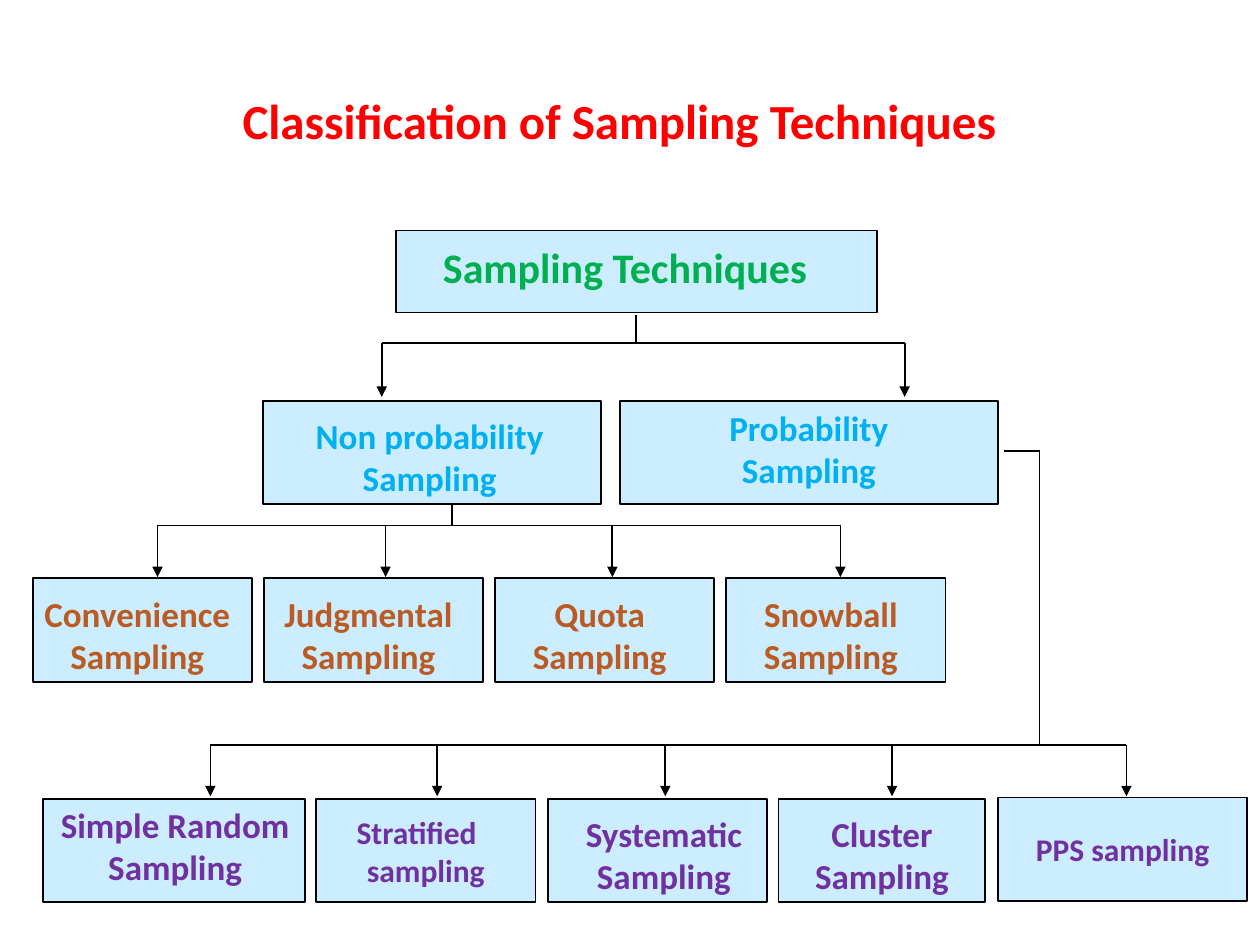
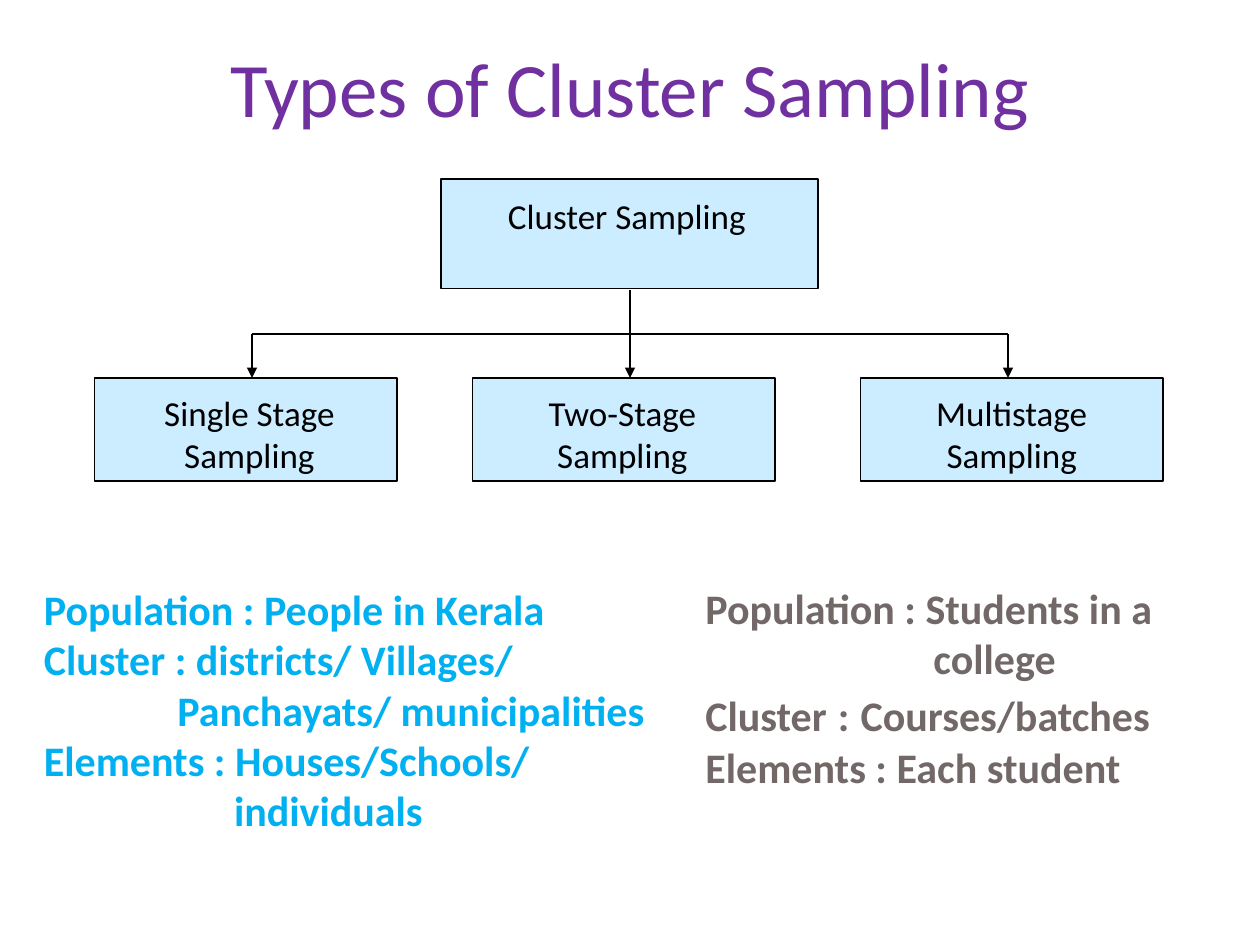
"""Two slides: a tree of sampling techniques and the types of cluster sampling."""
from lxml.etree import SubElement
from pptx import Presentation
from pptx.dml.color import RGBColor
from pptx.enum.shapes import MSO_CONNECTOR, MSO_SHAPE
from pptx.enum.text import MSO_ANCHOR, PP_ALIGN
from pptx.oxml.ns import qn
from pptx.util import Inches, Pt

FONT = "Calibri"
BLACK, RED, GREEN, BLUE = "000000", "FF0000", "00B050", "00B0F0"
BROWN, PURPLE, GREY, PALE_BLUE = "B95B22", "7030A0", "726868", "CCECFF"
BOX_HEIGHT = 0.82
TEXT_TOP = 0.11


def add_text(slide, at, lines, size, colour, bold=True, boxed=True,
             top=TEXT_TOP, shift=0, middle=False, align=PP_ALIGN.CENTER):
    """Write lines, with runs parted by a bar, in a box or on the slide."""
    area = [Inches(length) for length in at]
    if boxed:
        holder = slide.shapes.add_shape(MSO_SHAPE.RECTANGLE, *area)
        holder.shadow.inherit = False
        holder.fill.solid()
        holder.fill.fore_color.rgb = RGBColor.from_string(PALE_BLUE)
        holder.line.color.rgb = RGBColor.from_string(BLACK)
        holder.line.width = Pt(1)
    else:
        holder = slide.shapes.add_textbox(*area)
    frame = holder.text_frame
    frame.word_wrap = True
    frame.vertical_anchor = MSO_ANCHOR.MIDDLE if middle else MSO_ANCHOR.TOP
    if boxed:
        frame.margin_left = Inches(max(0, 2 * shift))
        frame.margin_right = Inches(max(0, -2 * shift))
        frame.margin_top = frame.margin_bottom = Inches(0 if middle else top)
    for number, line in enumerate(lines):
        paragraph = frame.paragraphs[0] if number == 0 else frame.add_paragraph()
        paragraph.alignment = align
        for part in line.split("|"):
            run = paragraph.add_run()
            run.text = part
            run.font.name = FONT
            run.font.size = Pt(size)
            run.font.bold = bold
            run.font.color.rgb = RGBColor.from_string(colour)
    return frame.paragraphs


def add_line(slide, start, end, arrow=False):
    """Draw a thin black line, with an arrowhead at its end if asked."""
    ends = [Inches(length) for length in (*start, *end)]
    line = slide.shapes.add_connector(MSO_CONNECTOR.STRAIGHT, *ends)
    line.line.color.rgb = RGBColor.from_string(BLACK)
    line.line.width = Pt(1)
    if arrow:
        SubElement(line.line._get_or_add_ln(), qn("a:tailEnd"), type="triangle")
    SubElement(line._element.spPr, qn("a:effectLst"))


deck = Presentation()
deck.slide_width, deck.slide_height = Inches(10), Inches(7.5)
techniques, clusters = [deck.slides.add_slide(deck.slide_layouts[6]) for _ in range(2)]

add_text(techniques, (1.33, 0.67, 7.17, 0.57), ["Classification of Sampling Techniques"],
         28, RED, boxed=False)
add_text(techniques, (3.14, 1.83, 3.82, 0.65), ["Sampling Techniques"],
         24, GREEN, top=0.09, shift=-0.09)
add_text(techniques, (2.09, 3.18, 2.68, BOX_HEIGHT), ["Non probability", "Sampling"],
         20, BLUE, shift=-0.02)
add_text(techniques, (4.92, 3.18, 3, BOX_HEIGHT), ["Probability", "Sampling"],
         20, BLUE, top=0.05)

for column, method in enumerate(["Convenience", "Judgmental", "Quota", "Snowball"]):
    add_text(techniques, (0.26 + 1.835 * column, 4.59, 1.74, BOX_HEIGHT),
             [method, "Sampling"], 20, BROWN, shift=-0.04)

for left, width, method, top, shift in [
    (0.34, 2.08, "Simple Random", 0.04, 0.01),
    (4.35, 1.74, "Systematic", TEXT_TOP, 0.05),
    (6.18, 1.64, "Cluster", TEXT_TOP, 0),
]:
    add_text(techniques, (left, 6.34, width, BOX_HEIGHT), [method, "Sampling"],
             20, PURPLE, top=top, shift=shift)
stratified = add_text(techniques, (2.51, 6.34, 1.74, BOX_HEIGHT),
                      ["Stratified", "sampling"], 18, PURPLE, middle=True)
stratified[0].alignment = PP_ALIGN.LEFT
stratified[0]._p.get_or_add_pPr().set("marL", str(Inches(0.32)))
add_text(techniques, (7.92, 6.33, 1.98, BOX_HEIGHT), ["PPS sampling"],
         18, PURPLE, middle=True)

add_text(clusters, (0.5, 0.25, 9, 0.87), ["Types of Cluster Sampling"],
         44, PURPLE, bold=False, boxed=False, middle=True)
add_text(clusters, (3.5, 1.42, 2.99, 0.87), ["Cluster Sampling"],
         20, BLACK, bold=False, top=0.12, shift=-0.02)
for left, stage, shift in [(0.75, "Single Stage", 0.03), (3.75, "Two-Stage", -0.01),
                           (6.83, "Multistage", 0)]:
    add_text(clusters, (left, 3, 2.4, BOX_HEIGHT), [stage, "Sampling"],
             20, BLACK, bold=False, shift=shift)

for slide, bar, tip, drops in [
    (techniques, 2.72, 3.15, [3.03, 7.18]),
    (techniques, 4.17, 4.58, [1.25, 3.06, 4.86, 6.67]),
    (techniques, 5.91, 6.32, [1.67, 3.47, 5.28, 7.08, 8.94]),
    (clusters, 2.65, 3, [2, 5, 8]),
]:
    add_line(slide, (drops[0], bar), (drops[-1], bar))
    for drop in drops:
        add_line(slide, (drop, bar), (drop, tip), arrow=True)

for slide, start, end in [
    (techniques, (5.05, 2.5), (5.05, 2.72)),
    (techniques, (3.59, 4.01), (3.59, 4.17)),
    (techniques, (7.97, 3.58), (8.25, 3.58)),
    (techniques, (8.25, 3.58), (8.25, 5.91)),
    (clusters, (5, 2.3), (5, 2.65)),
]:
    add_line(slide, start, end)

kerala = add_text(clusters, (0.25, 4.58, 5.08, 2.12), [
    "Population : People in Kerala",
    "Cluster : districts/ Villages/",
    "Panchayats/ municipalities",
    "Elements : Houses/Schools/",
    "individuals",
], 24, BLUE, boxed=False, align=PP_ALIGN.LEFT)
college = add_text(clusters, (5.5, 4.57, 4.25, 1.78), [
    "Population : Students in a",
    "college",
    "Cluster| |:| |Courses/batches",
    "Elements : Each student",
], 24, GREY, boxed=False, align=PP_ALIGN.LEFT)
for continuation, indent in [(kerala[2], 1.06), (kerala[4], 1.51), (college[1], 1.81)]:
    continuation._p.get_or_add_pPr().set("marL", str(Inches(indent)))
for gap in college[2].runs[1::2]:
    gap.font.size = Pt(28)

deck.save("out.pptx")
